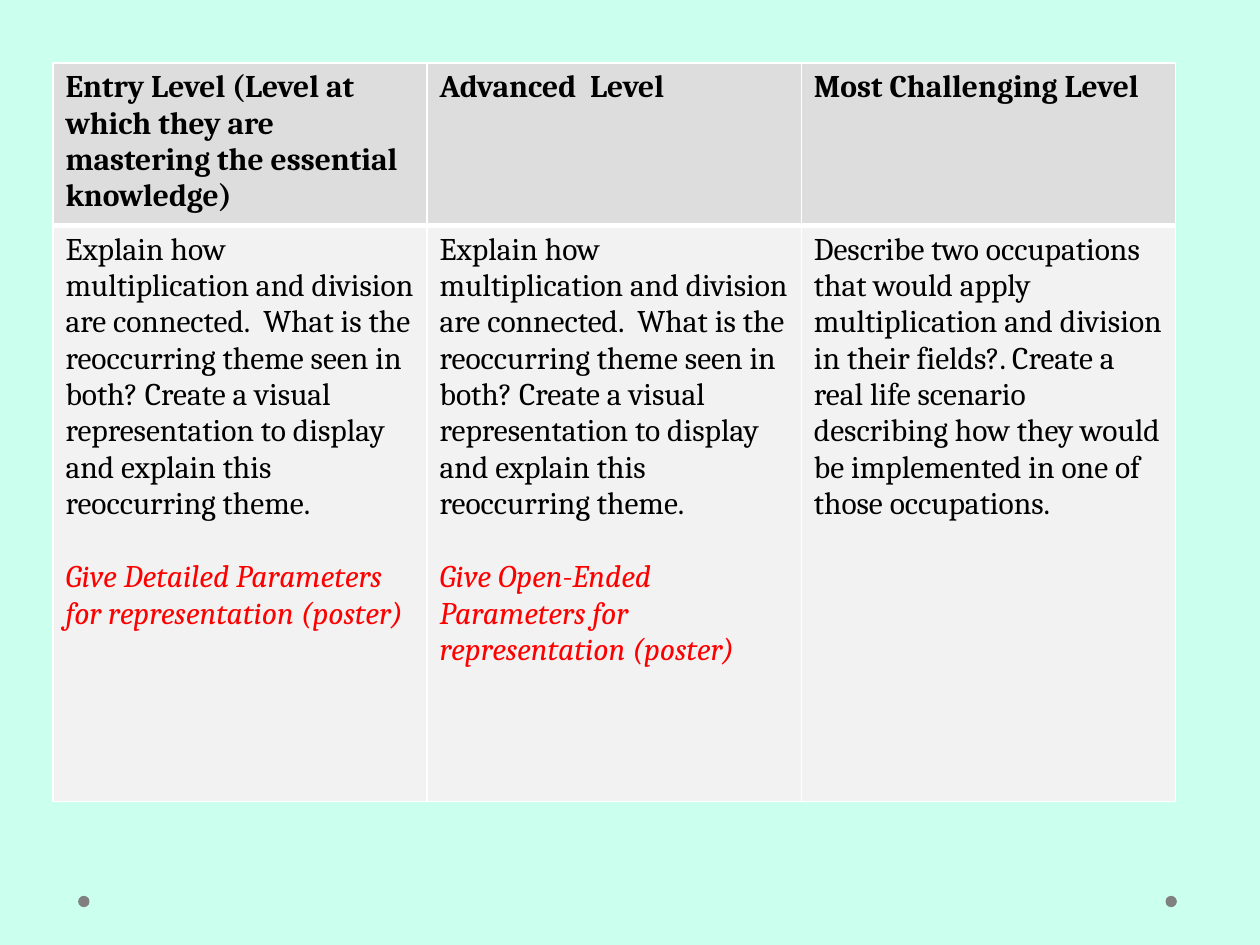
from dataclasses import dataclass

from lxml import etree
from pptx import Presentation, util as u
from pptx.dml.color import RGBColor
from pptx.enum import shapes
from pptx.oxml import ns

HUES = {
    "back": "CBFFEE", "dot": "808080", "head": "DDDDDD", "body": "F2F2F2",
    "edge": "FFFFFF", "ink": "000000", "note": "FF0000",
}
FONT = "Cambria"
SIZE = u.Pt(18)
GAP = u.Pt(21)
THEME = (
    "Explain how multiplication and division are connected.  What is the "
    "reoccurring theme seen in both? Create a visual representation to "
    "display and explain this reoccurring theme."
)
JOBS = (
    "Describe two occupations that would apply multiplication and division "
    "in their fields?. Create a  real life scenario describing how they "
    "would be implemented in one of those occupations."
)


@dataclass
class Level:
    title: str
    task: str
    note: str = ""


LEVELS = [
    Level("Entry Level (Level at which they are mastering the essential knowledge)",
          THEME, "Give Detailed Parameters for representation (poster)"),
    Level("Advanced  Level", THEME,
          "Give Open-Ended Parameters for representation (poster)"),
    Level("Most Challenging Level", JOBS),
]


def hue(name: str) -> RGBColor:
    return RGBColor.from_string(HUES[name])


def paint(cell, fill: str, top: float, bottom: float) -> None:
    """Give the cell its borders (widths in points), then its fill."""
    props = cell._tc.get_or_add_tcPr()
    for side, width in zip("LRTB", (1, 1, top, bottom)):
        line = etree.SubElement(props, ns.qn(f"a:ln{side}"), w=str(u.Pt(width)))
        solid = etree.SubElement(line, ns.qn("a:solidFill"))
        etree.SubElement(solid, ns.qn("a:srgbClr"), val=HUES["edge"])
    cell.fill.solid()
    cell.fill.fore_color.rgb = hue(fill)


def write(para, words: str, color: str = "ink", bold: bool = False,
          italic: bool = False) -> None:
    para.text = words
    font = para.font
    font.name, font.size = FONT, SIZE
    font.bold, font.italic = bold, italic
    font.color.rgb = hue(color)


def draw_dot(slide, left: float) -> None:
    dot = slide.shapes.add_shape(
        shapes.MSO_SHAPE.OVAL, u.Inches(left), u.Inches(7.11),
        u.Inches(0.09), u.Inches(0.09))
    dot.shadow.inherit = False
    dot.fill.solid()
    dot.fill.fore_color.rgb = hue("dot")
    dot.line.fill.background()


def draw_grid(slide, levels: list[Level]) -> None:
    grid = slide.shapes.add_table(
        2, len(levels), u.Inches(0.42), u.Inches(0.5),
        u.Inches(8.92), u.Inches(5.86)).table
    for row, height in zip(grid.rows, (1.29, 4.57)):
        row.height = u.Inches(height)
    for col, level in enumerate(levels):
        grid.columns[col].width = u.Inches(2.97)
        head, body = grid.cell(0, col), grid.cell(1, col)
        paint(head, "head", 1, 3)
        paint(body, "body", 3, 1)
        write(head.text_frame.paragraphs[0], level.title, bold=True)
        write(body.text_frame.paragraphs[0], level.task)
        if level.note:
            para = body.text_frame.add_paragraph()
            para.space_before = GAP
            write(para, level.note, "note", italic=True)


def main() -> None:
    deck = Presentation()
    deck.slide_width, deck.slide_height = u.Inches(10), u.Inches(7.5)
    slide = deck.slides.add_slide(deck.slide_layouts[6])
    slide.background.fill.solid()
    slide.background.fill.fore_color.rgb = hue("back")
    for left in (9.25, 0.62):
        draw_dot(slide, left)
    draw_grid(slide, LEVELS)
    deck.save("out.pptx")


if __name__ == "__main__":
    main()
